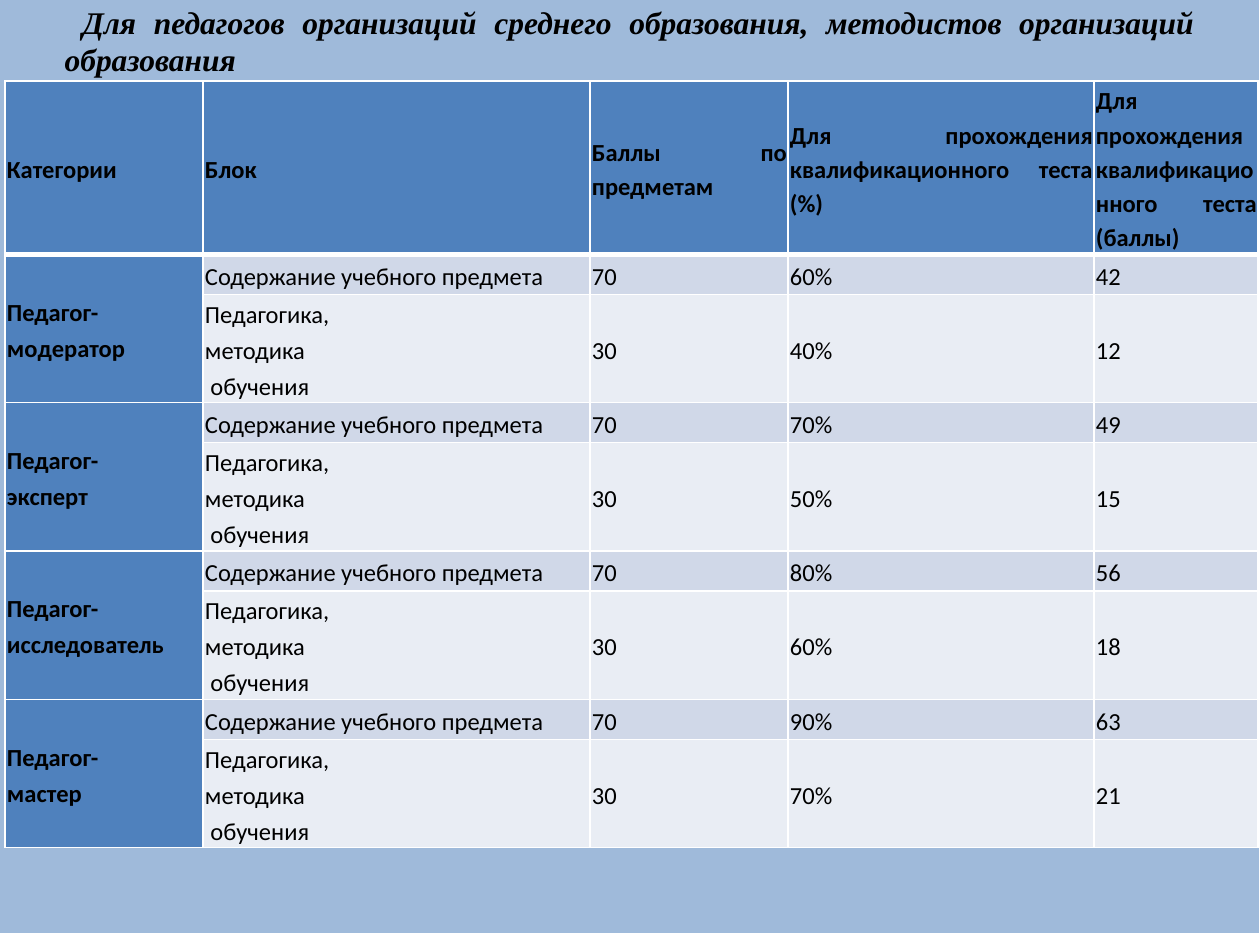
from dataclasses import dataclass

from lxml.etree import SubElement
from pptx import Presentation
from pptx.dml.color import RGBColor
from pptx.enum.shapes import MSO_SHAPE
from pptx.enum.text import MSO_ANCHOR, MSO_AUTO_SIZE, PP_ALIGN
from pptx.oxml.ns import qn
from pptx.util import Emu, Inches, Pt

BLACK, WHITE = "000000", "FFFFFF"
BACKDROP, HEADER, BAND_DARK, BAND_LIGHT = "95B3D7", "4F81BD", "D0D8E8", "E9EDF4"
EMU_PER_PX = 914400 / 126

COLUMN_WIDTHS = (198, 387, 198, 306, 164)
HEADINGS = (
    "Категории",
    "Блок",
    "Баллы по предметам",
    "Для прохождения квалификационного теста (%)",
    "Для прохождения квалификационного теста (баллы)",
)
SUBJECT = ("Содержание учебного предмета",)
PEDAGOGY = ("Педагогика,", "методика", " обучения")
SUBJECT_HEIGHT, PEDAGOGY_HEIGHT = 40, 63


@dataclass
class Category:
    name: str
    subject: tuple[str, str, str]
    pedagogy: tuple[str, str, str]


CATEGORIES = (
    Category("модератор", ("70", "60%", "42"), ("30", "40%", "12")),
    Category("эксперт", ("70", "70%", "49"), ("30", "50%", "15")),
    Category("исследователь", ("70", "80%", "56"), ("30", "60%", "18")),
    Category("мастер", ("70", "90%", "63"), ("30", "70%", "21")),
)


def px(n: int) -> Emu:
    return Emu(round(n * EMU_PER_PX))


def rgb(color: str) -> RGBColor:
    return RGBColor.from_string(color)


def add_run(p, text: str, font: str, size: int, bold=False, italic=False) -> None:
    r = p.add_run()
    r.text = text
    r.font.name, r.font.size = font, Pt(size)
    r.font.bold, r.font.italic = bold, italic
    r.font.color.rgb = rgb(BLACK)


def set_borders(cell, header: bool, below_header: bool) -> None:
    """White lines, heavier between the heading row and the body."""
    widths = {"L": 1, "R": 1, "T": 3 if below_header else 1, "B": 3 if header else 1}
    tcPr = cell._tc.get_or_add_tcPr()
    for side, width in widths.items():
        ln = SubElement(tcPr, qn(f"a:ln{side}"), w=str(Pt(width)))
        SubElement(SubElement(ln, qn("a:solidFill")), qn("a:srgbClr"), val=WHITE)


def fill_cell(table, row: int, col: int, lines: tuple[str, ...], color: str,
              bold=False, align=PP_ALIGN.JUSTIFY) -> None:
    cell = table.cell(row, col)
    set_borders(cell, header=row == 0, below_header=row == 1)
    cell.fill.solid()
    cell.fill.fore_color.rgb = rgb(color)
    cell.vertical_anchor = MSO_ANCHOR.MIDDLE
    cell.margin_left = cell.margin_right = px(1)
    cell.margin_top = cell.margin_bottom = px(1)
    tf = cell.text_frame
    for i, line in enumerate(lines):
        p = tf.add_paragraph() if i else tf.paragraphs[0]
        p.alignment, p.line_spacing, p.space_after = align, 1.15, Pt(1)
        pPr = p._p.get_or_add_pPr()
        pPr.set("marL", str(px(1)))
        pPr.set("indent", "0")
        add_run(p, line, "Calibri", 14, bold)


def add_backdrop(slide) -> None:
    sp = slide.shapes.add_shape(MSO_SHAPE.RECTANGLE, px(-2), px(-16), px(1261), px(949))
    sp.shadow.inherit = False
    sp.line.fill.background()
    sp.fill.solid()
    sp.fill.fore_color.rgb = rgb(BACKDROP)
    clr = sp._element.spPr.find(qn("a:solidFill")).find(qn("a:srgbClr"))
    SubElement(clr, qn("a:alpha"), val="90000")
    slide.shapes._spTree.insert(2, sp._element)  # behind the title


def format_title(title) -> None:
    title.left, title.top, title.width, title.height = px(52), px(0), px(1155), px(43)
    tf = title.text_frame
    tf.word_wrap, tf.auto_size = True, MSO_AUTO_SIZE.NONE
    tf.vertical_anchor = MSO_ANCHOR.TOP
    tf.margin_left = tf.margin_right = Inches(0.1)
    tf.margin_top = tf.margin_bottom = Inches(0.02)  # keeps both lines above the table
    p = tf.paragraphs[0]
    p.alignment, p.line_spacing = PP_ALIGN.JUSTIFY, 1.0
    p.space_before = Pt(0)
    add_run(p, " ", "Times New Roman", 18)
    add_run(p, "Для педагогов организаций среднего образования, методистов "
               "организаций образования", "Times New Roman", 18, bold=True, italic=True)


def add_score_table(slide) -> None:
    frame = slide.shapes.add_table(1 + 2 * len(CATEGORIES), len(HEADINGS),
                                   px(5), px(81), px(sum(COLUMN_WIDTHS)), px(751))
    table = frame.table
    for column, width in zip(table.columns, COLUMN_WIDTHS):
        column.width = px(width)
    for i, row in enumerate(table.rows):
        row.height = px(PEDAGOGY_HEIGHT if i and i % 2 == 0 else SUBJECT_HEIGHT)
    frame.height = px(751)

    for col, heading in enumerate(HEADINGS):
        fill_cell(table, 0, col, (heading,), HEADER, bold=True)
    for i, category in enumerate(CATEGORIES):
        top = 1 + 2 * i
        table.cell(top, 0).merge(table.cell(top + 1, 0))
        fill_cell(table, top, 0, ("Педагог-", category.name), HEADER, bold=True)
        blocks = ((SUBJECT, category.subject, BAND_DARK),
                  (PEDAGOGY, category.pedagogy, BAND_LIGHT))
        for row, (block, scores, color) in enumerate(blocks, top):
            fill_cell(table, row, 1, block, color, align=PP_ALIGN.LEFT)
            for col, score in enumerate(scores, 2):
                fill_cell(table, row, col, (score,), color)


def main() -> None:
    prs = Presentation()
    prs.slide_width, prs.slide_height = Inches(10), Inches(7.5)
    slide = prs.slides.add_slide(prs.slide_layouts[5])
    add_backdrop(slide)
    format_title(slide.shapes.title)
    add_score_table(slide)
    prs.save("out.pptx")


if __name__ == "__main__":
    main()
